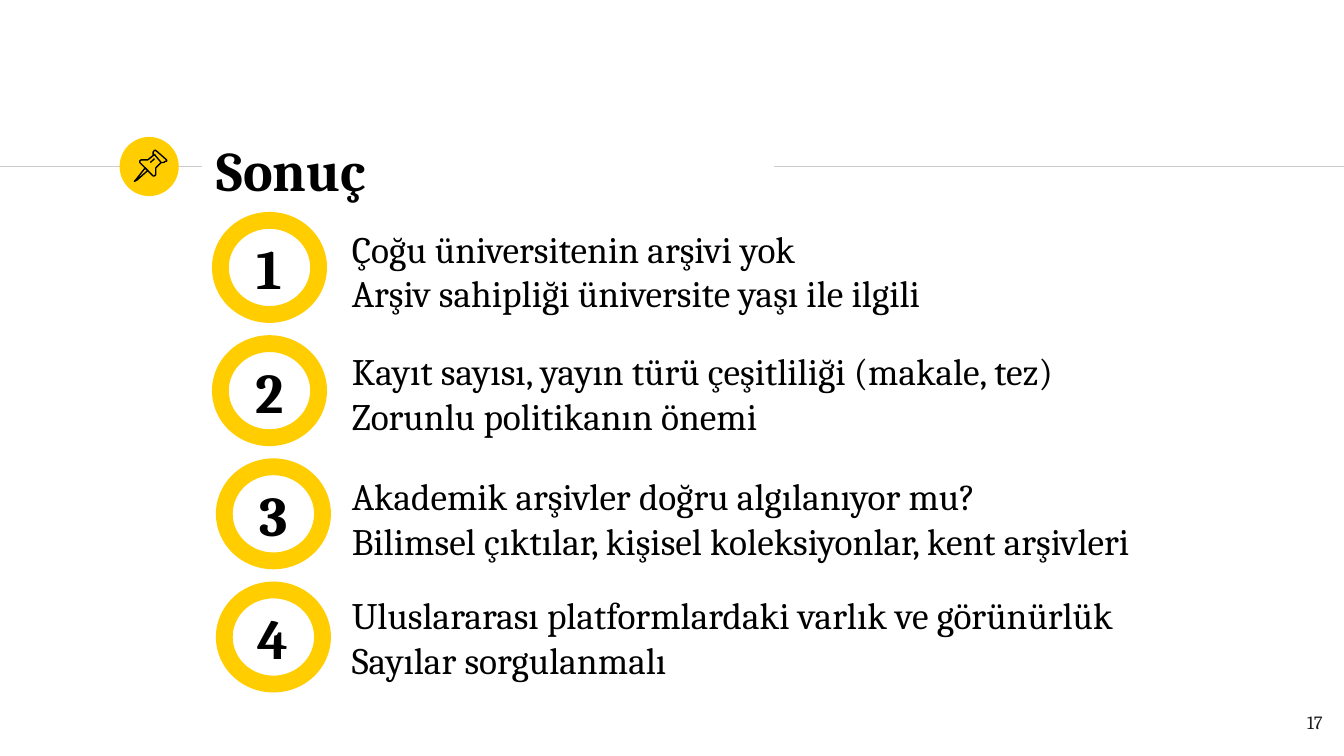
from dataclasses import dataclass

from lxml.etree import SubElement
from pptx import Presentation
from pptx.dml.color import RGBColor
from pptx.enum.shapes import MSO_CONNECTOR, MSO_SHAPE
from pptx.enum.text import MSO_ANCHOR, MSO_AUTO_SIZE, PP_ALIGN
from pptx.oxml.ns import qn
from pptx.slide import Slide
from pptx.text.text import TextFrame
from pptx.util import Pt


@dataclass(frozen=True)
class Theme:
    font: str = "Cambria"
    accent: RGBColor = RGBColor(0xFF, 0xCD, 0x00)
    rule: RGBColor = RGBColor(0xCC, 0xCC, 0xCC)
    ink: RGBColor = RGBColor(0, 0, 0)
    footer: RGBColor = RGBColor(0x1D, 0x1D, 0x1B)
    heading_size: float = 30
    body_size: float = 20
    footer_size: float = 10
    thin: float = 0.75
    ring: float = 9
    inset: float = 7.2


@dataclass(frozen=True)
class Box:
    left: float
    top: float
    width: float
    height: float

    def lengths(self) -> tuple:
        return Pt(self.left), Pt(self.top), Pt(self.width), Pt(self.height)


@dataclass(frozen=True)
class Conclusion:
    ring_left: float
    text_box: Box
    lines: tuple[str, ...]
    space_after: float = 6


@dataclass(frozen=True)
class Stroke:
    points: tuple[tuple[float, float], ...]
    closed: bool


THEME = Theme()
RULE_TOP = 89.3
RING_TOP, RING_PITCH = 118.1, 66
RING_WIDTH, RING_HEIGHT = 52.6, 50.4
TEXT_LEFT = 181.4

CONCLUSIONS = (
    Conclusion(118.1, Box(TEXT_LEFT, 113.8, 427, 59.8),
               ("Çoğu üniversitenin arşivi yok",
                "Arşiv sahipliği üniversite yaşı ile ilgili"), 0),
    Conclusion(118.1, Box(TEXT_LEFT, 179.3, 438.5, 41.8),
               ("Kayıt sayısı, yayın türü çeşitliliği (makale, tez)",
                "Zorunlu politikanın önemi")),
    Conclusion(120.2, Box(TEXT_LEFT, 246.2, 496.8, 55.4),
               ("Akademik arşivler doğru algılanıyor mu?",
                "Bilimsel çıktılar, kişisel koleksiyonlar, kent arşivleri")),
    Conclusion(120.2, Box(TEXT_LEFT, 310.3, 496.8, 50.4),
               ("Uluslararası platformlardaki varlık ve görünürlük",
                "Sayılar sorgulanmalı")),
)

# Pushpin: needle, head, body and gleam
PIN = (
    Stroke(((77.8, 90), (72.7, 96.5), (72, 97.2), (73.4, 96.5), (79.2, 91.4)), True),
    Stroke(((82.8, 82.8), (86.4, 87.1), (87.8, 87.1), (88.6, 86.4), (89.3, 86.4),
            (89.3, 85.7), (83.5, 80.6), (82.8, 80.6), (82.1, 81.4), (82.1, 82.8)), True),
    Stroke(((82.8, 82.8), (79.2, 85.7), (75.6, 85.7), (74.9, 86.4), (74.9, 87.1),
            (82.1, 94.3), (82.8, 94.3), (83.5, 93.6), (83.5, 90), (86.4, 87.1)), False),
    Stroke(((80.6, 87.1), (82.8, 85)), False),
)


def write_text(frame: TextFrame, lines: tuple[str, ...], size: float,
               color: RGBColor = THEME.ink, bold: bool = False,
               alignment: PP_ALIGN = PP_ALIGN.LEFT,
               anchor: MSO_ANCHOR = MSO_ANCHOR.TOP, wrap: bool = True) -> None:
    frame.word_wrap = wrap
    frame.auto_size = MSO_AUTO_SIZE.NONE
    frame.vertical_anchor = anchor
    frame.margin_left = frame.margin_right = Pt(THEME.inset)
    frame.margin_top = frame.margin_bottom = Pt(THEME.inset)
    frame.text = "\n".join(lines)
    for paragraph in frame.paragraphs:
        paragraph.alignment = alignment
        paragraph.space_before = paragraph.space_after = Pt(0)
        paragraph.line_spacing = 1.0
        paragraph.font.name = THEME.font
        paragraph.font.size = Pt(size)
        paragraph.font.bold = bold
        paragraph.font.color.rgb = color


def add_rule(slide: Slide, start: float, end: float) -> None:
    line = slide.shapes.add_connector(
        MSO_CONNECTOR.STRAIGHT, Pt(start), Pt(RULE_TOP), Pt(end), Pt(RULE_TOP))
    line.line.color.rgb = THEME.rule
    line.line.width = Pt(THEME.thin)
    SubElement(line._element.spPr, qn("a:effectLst"))


def add_badge(slide: Slide, box: Box) -> None:
    shape = slide.shapes.add_shape(MSO_SHAPE.OVAL, *box.lengths())
    shape.shadow.inherit = False
    shape.fill.solid()
    shape.fill.fore_color.rgb = THEME.accent
    shape.line.fill.background()


def add_stroke(slide: Slide, stroke: Stroke) -> None:
    # Builder units are whole numbers, so draw in hundredths of a point
    start, *rest = [(x * 100, y * 100) for x, y in stroke.points]
    builder = slide.shapes.build_freeform(*start, scale=Pt(0.01))
    builder.add_line_segments(rest, close=stroke.closed)
    shape = builder.convert_to_shape()
    shape.shadow.inherit = False
    shape.fill.background()
    shape.line.color.rgb = THEME.ink
    shape.line.width = Pt(THEME.thin)


def add_conclusion(slide: Slide, index: int, conclusion: Conclusion) -> None:
    box = Box(conclusion.ring_left, RING_TOP + index * RING_PITCH, RING_WIDTH, RING_HEIGHT)
    ring = slide.shapes.add_shape(MSO_SHAPE.OVAL, *box.lengths())
    ring.shadow.inherit = False
    ring.fill.background()
    ring.line.color.rgb = THEME.accent
    ring.line.width = Pt(THEME.ring)
    write_text(ring.text_frame, (str(index + 1),), THEME.heading_size, bold=True,
               alignment=PP_ALIGN.CENTER, anchor=MSO_ANCHOR.MIDDLE, wrap=False)

    text = slide.shapes.add_textbox(*conclusion.text_box.lengths())
    write_text(text.text_frame, conclusion.lines, THEME.body_size)
    text.text_frame.paragraphs[-1].space_after = Pt(conclusion.space_after)


def main() -> None:
    presentation = Presentation()
    presentation.slide_width, presentation.slide_height = Pt(720), Pt(405)
    slide = presentation.slides.add_slide(presentation.slide_layouts[5])

    # Header: rules, badge, title and pushpin
    add_rule(slide, 0, 108)
    add_badge(slide, Box(64.1, 73.4, 31.7, 31.7))
    add_rule(slide, 414.7, 720)
    title = slide.shapes.title
    title.left, title.top, title.width, title.height = Box(108.7, 73.4, 305.3, 34.6).lengths()
    write_text(title.text_frame, ("Sonuç",), THEME.heading_size, bold=True,
               anchor=MSO_ANCHOR.MIDDLE)
    for stroke in PIN:
        add_stroke(slide, stroke)

    # Numbered conclusions
    for index, conclusion in enumerate(CONCLUSIONS):
        add_conclusion(slide, index, conclusion)

    # Page number
    number = slide.shapes.add_textbox(*Box(672.5, 373.7, 43.2, 31).lengths())
    write_text(number.text_frame, ("17",), THEME.footer_size, THEME.footer,
               alignment=PP_ALIGN.RIGHT)

    presentation.save("out.pptx")


if __name__ == "__main__":
    main()
